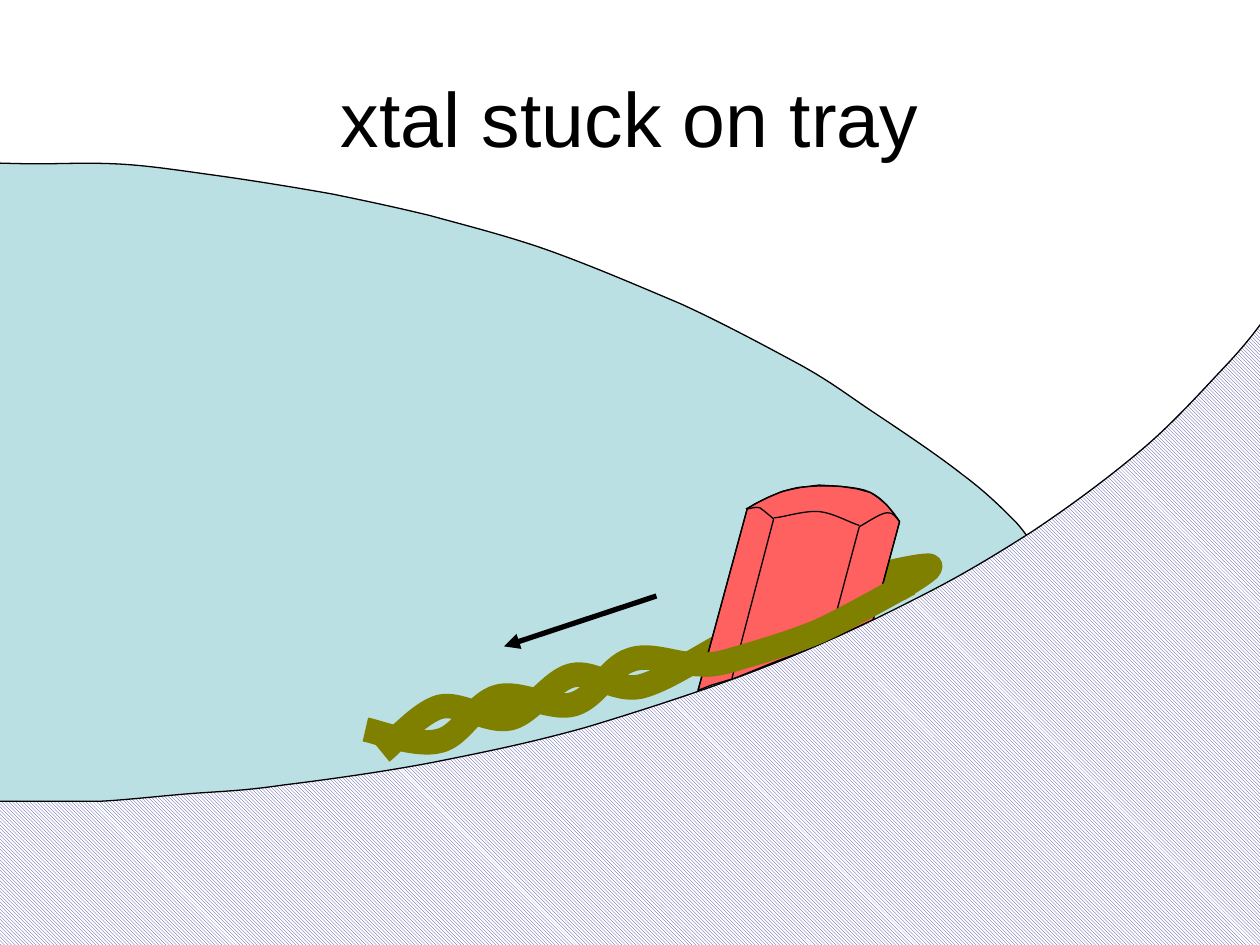
from lxml.etree import SubElement
from pptx import Presentation
from pptx.dml.color import RGBColor
from pptx.enum.dml import MSO_PATTERN
from pptx.enum.shapes import MSO_CONNECTOR
from pptx.enum.text import MSO_ANCHOR, PP_ALIGN
from pptx.oxml.ns import qn
from pptx.util import Inches, Pt

# Grid of 1000 columns by 750 rows
UNIT = Inches(0.01)
BLACK, OLIVE = "000000", "808000"

prs = Presentation()
prs.slide_width, prs.slide_height = 1000 * UNIT, 750 * UNIT
shapes = prs.slides.add_slide(prs.slide_layouts[6]).shapes


def add_outline(points, color=BLACK, width=0.75, closed=False, curved=True):
    """Draw a freeform; if curved, each three points after the first make one Bezier."""
    builder = shapes.build_freeform(*points[0], scale=UNIT)
    builder.add_line_segments(points[1:], close=closed)
    s = builder.convert_to_shape()
    s.shadow.inherit = False
    s.fill.background()
    s.line.color.rgb = RGBColor.from_string(color)
    s.line.width = Pt(width)
    if curved:
        path = s.element.find(".//" + qn("a:path"))
        segments = path.findall(qn("a:lnTo"))
        for i in range(0, len(points) - 1, 3):
            curve = SubElement(path, qn("a:cubicBezTo"))
            segments[i].addprevious(curve)
            for segment in segments[i:i + 3]:
                curve.append(segment[0])
                path.remove(segment)
    return s


def add_line(start, end, width=0.75):
    s = shapes.add_connector(MSO_CONNECTOR.STRAIGHT, *(v * UNIT for v in start + end))
    s.line.color.rgb = RGBColor.from_string(BLACK)
    s.line.width = Pt(width)
    SubElement(s.element.spPr, qn("a:effectLst"))
    return s


# Drop of liquid
drop = add_outline([
    (-26, 129), (-8, 129), (11, 130), (30, 130), (49, 130), (68, 129), (91, 130),
    (115, 131), (141, 135), (170, 139), (199, 143), (236, 149), (264, 154),
    (293, 160), (312, 164), (341, 171), (370, 179), (406, 188), (439, 200),
    (472, 212), (507, 227), (540, 241), (573, 256), (610, 276), (636, 290),
    (661, 304), (672, 313), (693, 327), (714, 341), (744, 361), (763, 376),
    (782, 390), (795, 403), (806, 414), (816, 425), (821, 435), (826, 441),
    (830, 448), (870, 423), (834, 451), (798, 480), (723, 570), (609, 611),
    (494, 653), (251, 690), (144, 699), (37, 708), (2, 687), (-33, 666),
    (-33, 666), (-26, 129), (-26, 129)], closed=True)
drop.fill.solid()
drop.fill.fore_color.rgb = RGBColor.from_string("BBE0E3")

# Strand of the loop behind the crystal
add_outline([
    (713, 468), (717, 465), (747, 448), (736, 449), (725, 449), (673, 461), (647, 472),
    (620, 482), (600, 498), (577, 510), (554, 522), (528, 540), (508, 545),
    (487, 549), (471, 532), (454, 536), (437, 540), (422, 566), (405, 570),
    (387, 574), (366, 557), (349, 561), (332, 566), (311, 591), (303, 597)], OLIVE, 14)

# Crystal body
crystal = add_outline([
    (554, 548), (593, 404), (599, 400), (609, 395), (621, 390), (635, 387), (650, 385),
    (667, 386), (680, 388), (691, 391), (697, 395), (704, 401), (709, 407), (714, 414),
    (693, 492), (667, 504), (643, 515), (616, 525), (584, 538), (564, 544)],
    closed=True, curved=False)
crystal.fill.solid()
crystal.fill.fore_color.rgb = RGBColor.from_string("FF6161")

# Title
title = shapes.add_textbox(50 * UNIT, 30 * UNIT, 900 * UNIT, 125 * UNIT)
tf = title.text_frame
tf.word_wrap = True
tf.vertical_anchor = MSO_ANCHOR.MIDDLE
p = tf.paragraphs[0]
p.text = "xtal stuck on tray"
p.alignment = PP_ALIGN.CENTER
p.font.name, p.font.size = "Arial", Pt(44)
p.font.color.rgb = RGBColor.from_string(BLACK)

# Hatched tray
tray = add_outline([
    (-16, 636), (-4, 636), (9, 636), (25, 636), (40, 636), (57, 636), (78, 636),
    (99, 635), (125, 632), (149, 630), (174, 628), (191, 628), (225, 623),
    (258, 619), (309, 612), (349, 604), (389, 596), (423, 589), (466, 577),
    (509, 564), (565, 546), (608, 529), (652, 512), (692, 493), (727, 475),
    (763, 457), (789, 441), (819, 422), (849, 402), (880, 379), (906, 357),
    (931, 336), (955, 309), (973, 290), (990, 272), (1001, 257), (1010, 244),
    (1018, 230), (1023, 122), (1026, 210), (1030, 297), (1205, 675), (1030, 767),
    (856, 860), (418, 812), (-20, 764), (-20, 764), (-16, 636), (-16, 636)], closed=True)
tray.fill.patterned()
tray.fill.pattern = MSO_PATTERN.LIGHT_DOWNWARD_DIAGONAL
tray.fill.fore_color.rgb = RGBColor.from_string("333399")
tray.fill.back_color.rgb = RGBColor.from_string("FFFFFF")

# Crystal edges, from the tray up to the top face
for foot, top in [((554, 548), (593, 404)), ((581, 538), (614, 412)),
                  ((658, 508), (682, 418)), ((693, 492), (714, 414))]:
    add_line(foot, top)

# Rim of the top face: three front arcs, then the back arc
for arc in [
    [(593, 404), (595, 404), (599, 402), (603, 403), (606, 405), (612, 410), (614, 412)],
    [(614, 411), (620, 411), (638, 405), (650, 406), (661, 407), (675, 415), (682, 417)],
    [(682, 418), (686, 416), (699, 407), (704, 407), (709, 406), (712, 412), (714, 414)],
    [(592, 404), (605, 397), (617, 390), (633, 387), (648, 385), (672, 385), (686, 389),
     (699, 393), (706, 403), (714, 414)],
]:
    add_outline(arc)

# Strand of the loop in front of the crystal
add_outline([
    (722, 463), (710, 469), (674, 490), (650, 501), (626, 511), (594, 520), (577, 525),
    (560, 529), (561, 527), (548, 527), (535, 527), (515, 518), (500, 524),
    (484, 529), (473, 554), (455, 559), (438, 564), (412, 548), (395, 553),
    (377, 558), (366, 584), (349, 588), (331, 593), (300, 581), (290, 579)], OLIVE, 14)

# Direction of pull
arrow = add_line((521, 473), (400, 513), 3)
SubElement(arrow.line._get_or_add_ln(), qn("a:tailEnd"), type="triangle")

prs.save("out.pptx")
